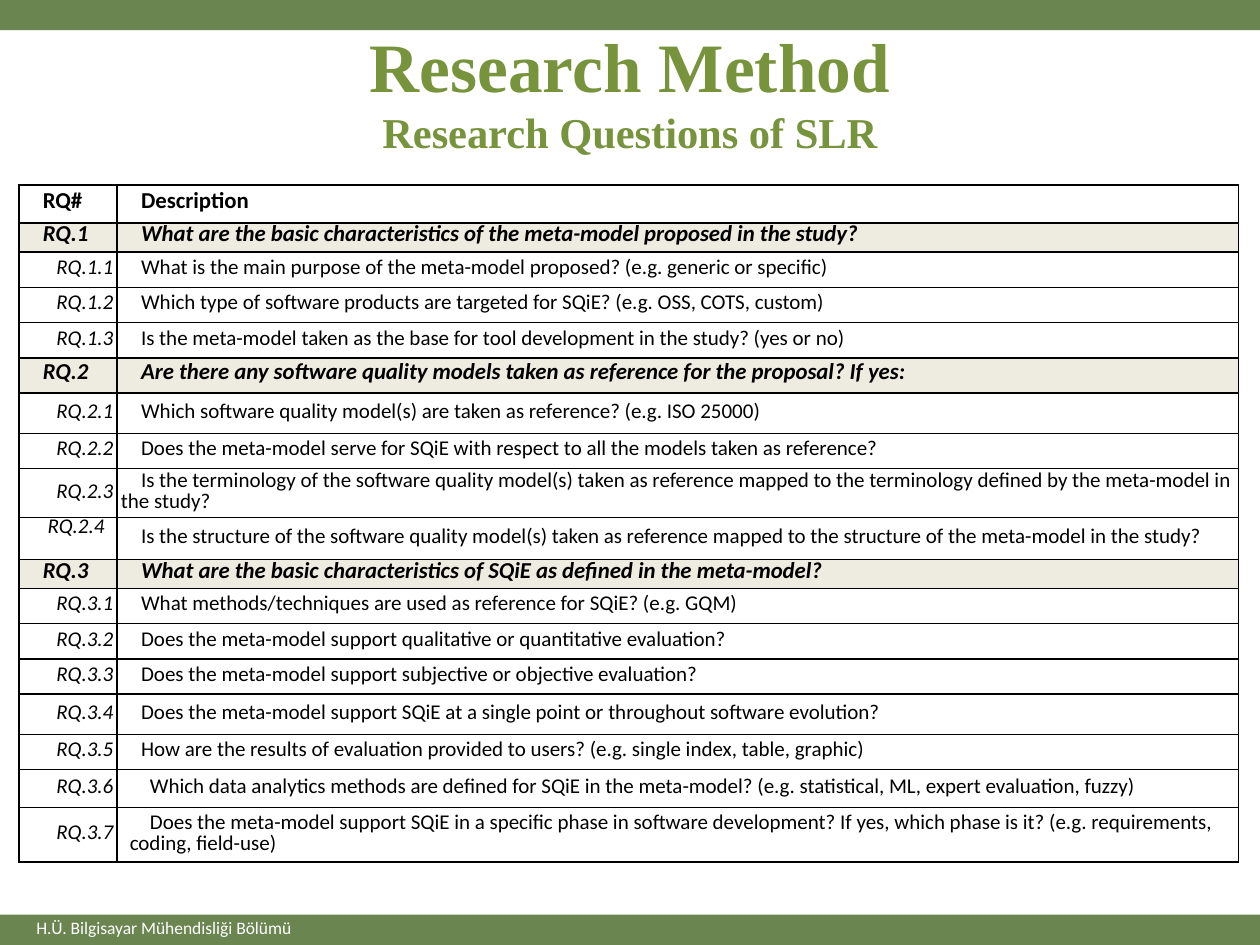
from copy import deepcopy

from lxml.etree import SubElement
from pptx import Presentation
from pptx.dml.color import RGBColor
from pptx.enum.shapes import MSO_SHAPE as Shape
from pptx.enum.text import MSO_ANCHOR as Anchor, PP_ALIGN as Align
from pptx.oxml.ns import qn
from pptx.util import Inches, Pt

# Label, description, row height in inches
ROWS = [
    ("RQ#", "Description", 0.3),
    ("RQ.1", "What are the basic characteristics of the meta-model proposed in the study?", 0.23),
    ("RQ.1.1", "What is the main purpose of the meta-model proposed? (e.g. generic or specific)", 0.28),
    ("RQ.1.2", "Which type of software products are targeted for SQiE? (e.g. OSS, COTS, custom)", 0.28),
    ("RQ.1.3", "Is the meta-model taken as the base for tool development in the study? (yes or no)", 0.28),
    ("RQ.2", "Are there any software quality models taken as reference for the proposal? If yes:", 0.28),
    ("RQ.2.1", "Which software quality model(s) are taken as reference? (e.g. ISO 25000)", 0.32),
    ("RQ.2.2", "Does the meta-model serve for SQiE with respect to all the models taken as reference?", 0.28),
    ("RQ.2.3", "Is the terminology of the software quality model(s) taken as reference mapped to "
               "the terminology defined by the meta-model in the study?", 0.39),
    ("RQ.2.4", "Is the structure of the software quality model(s) taken as reference mapped to "
               "the structure of the meta-model in the study?", 0.33),
    ("RQ.3", "What are the basic characteristics of SQiE as defined in the meta-model?", 0.23),
    ("RQ.3.1", "What methods/techniques are used as reference for SQiE? (e.g. GQM)", 0.28),
    ("RQ.3.2", "Does the meta-model support qualitative or quantitative evaluation?", 0.28),
    ("RQ.3.3", "Does the meta-model support subjective or objective evaluation?", 0.28),
    ("RQ.3.4", "Does the meta-model support SQiE at a single point or throughout software evolution?", 0.32),
    ("RQ.3.5", "How are the results of evaluation provided to users? (e.g. single index, table, graphic)", 0.28),
    ("RQ.3.6", "Which data analytics methods are defined for SQiE in the meta-model? "
               "(e.g. statistical, ML, expert evaluation, fuzzy)", 0.3),
    ("RQ.3.7", "Does the meta-model support SQiE in a specific phase in software development? "
               "If yes, which phase is it? (e.g. requirements, coding, field-use)", 0.42),
]
WIDE_MARGIN_LABELS = ("RQ.3.6", "RQ.3.7")
RAISED_LABEL = "RQ.2.4"


def color(hex_string):
    return RGBColor.from_string(hex_string)


def write(paragraph, text, size=12, font="Calibri", hex_color="000000",
          bold=False, italic=False, align=None):
    run = paragraph.add_run()
    run.text = text
    run.font.size = Pt(size)
    run.font.name = font
    run.font.bold = bold
    run.font.italic = italic
    run.font.color.rgb = color(hex_color)
    if align is not None:
        paragraph.alignment = align
    return run


def set_borders(cell, hex_color="000000", width=1):
    properties = cell._tc.get_or_add_tcPr()
    for side in ("a:lnL", "a:lnR", "a:lnT", "a:lnB"):
        line = SubElement(properties, qn(side), w=str(Pt(width)))
        fill = SubElement(line, qn("a:solidFill"))
        SubElement(fill, qn("a:srgbClr"), val=hex_color)


class QuestionSlide:
    GREEN = "6B8550"
    TITLE_GREEN = "77933C"
    SECTION_FILL = "EEECE1"

    def __init__(self, presentation):
        self.slide = presentation.slides.add_slide(presentation.slide_layouts[5])

    def bar(self, top):
        shape = self.slide.shapes.add_shape(
            Shape.RECTANGLE, 0, Inches(top), Inches(10), Inches(0.24))
        shape.shadow.inherit = False
        shape.fill.solid()
        shape.fill.fore_color.rgb = color(self.GREEN)
        shape.line.fill.background()

    def footer(self, text):
        box = self.slide.shapes.add_textbox(
            Inches(0.19), Inches(7.23), Inches(2.26), Inches(0.27))
        box.text_frame.word_wrap = False
        write(box.text_frame.paragraphs[0], text, size=10, hex_color="FFFFFF")

    def title(self, heading, subheading):
        title = self.slide.shapes.title
        title.left, title.top = Inches(0.5), Inches(0.22)
        title.width, title.height = Inches(9), Inches(0.99)
        title.text_frame.vertical_anchor = Anchor.MIDDLE
        paragraph = title.text_frame.paragraphs[0]
        style = dict(font="Times New Roman", hex_color=self.TITLE_GREEN,
                     bold=True, align=Align.CENTER)
        run = write(paragraph, heading, size=39.6, **style)
        paragraph.add_line_break()
        # The break needs the heading's format to keep its line height
        paragraph._p[-1].append(deepcopy(run._r.rPr))
        write(paragraph, subheading, size=24.3, **style)

    def cell(self, cell, text, fill=None, margin=0.03, **text_format):
        cell.vertical_anchor = Anchor.MIDDLE
        cell.margin_left = cell.margin_right = Inches(margin)
        cell.margin_top = cell.margin_bottom = Inches(0.05 if margin == 0.1 else 0)
        set_borders(cell)
        if fill:
            cell.fill.solid()
            cell.fill.fore_color.rgb = color(fill)
        else:
            cell.fill.background()
        paragraph = cell.text_frame.paragraphs[0]
        paragraph.line_spacing = Pt(12)
        write(paragraph, text, **text_format)
        properties = paragraph._p.get_or_add_pPr()
        properties.set("marL", "0")
        properties.set("indent", str(Inches(0.16)))

    def table(self, rows):
        total = sum(height for *_, height in rows)
        table = self.slide.shapes.add_table(
            len(rows), 2, Inches(0.15), Inches(1.47), Inches(9.68), Inches(total)).table
        table.first_row = table.horz_banding = False
        table.columns[0].width, table.columns[1].width = Inches(0.78), Inches(8.9)
        for index, (label, description, height) in enumerate(rows):
            table.rows[index].height = Inches(height)
            label_cell, description_cell = table.cell(index, 0), table.cell(index, 1)
            if label.count(".") == 2:
                margin = 0.1 if label in WIDE_MARGIN_LABELS else 0.03
                self.cell(label_cell, label, italic=True, align=Align.RIGHT)
                self.cell(description_cell, description, margin=margin)
            else:
                is_section = index > 0
                style = dict(size=13, bold=True, italic=is_section,
                             fill=self.SECTION_FILL if is_section else None)
                self.cell(label_cell, label, **style)
                self.cell(description_cell, description, **style)
            if label == RAISED_LABEL:
                label_cell.vertical_anchor = Anchor.TOP
                label_cell.margin_right = Inches(0.1)


def main():
    presentation = Presentation()
    presentation.slide_width, presentation.slide_height = Inches(10), Inches(7.5)
    page = QuestionSlide(presentation)
    page.bar(7.26)
    page.footer("H.Ü. Bilgisayar Mühendisliği Bölümü")
    page.bar(0)
    page.title("Research Method", "Research Questions of SLR")
    page.table(ROWS)
    presentation.save("out.pptx")


if __name__ == "__main__":
    main()
